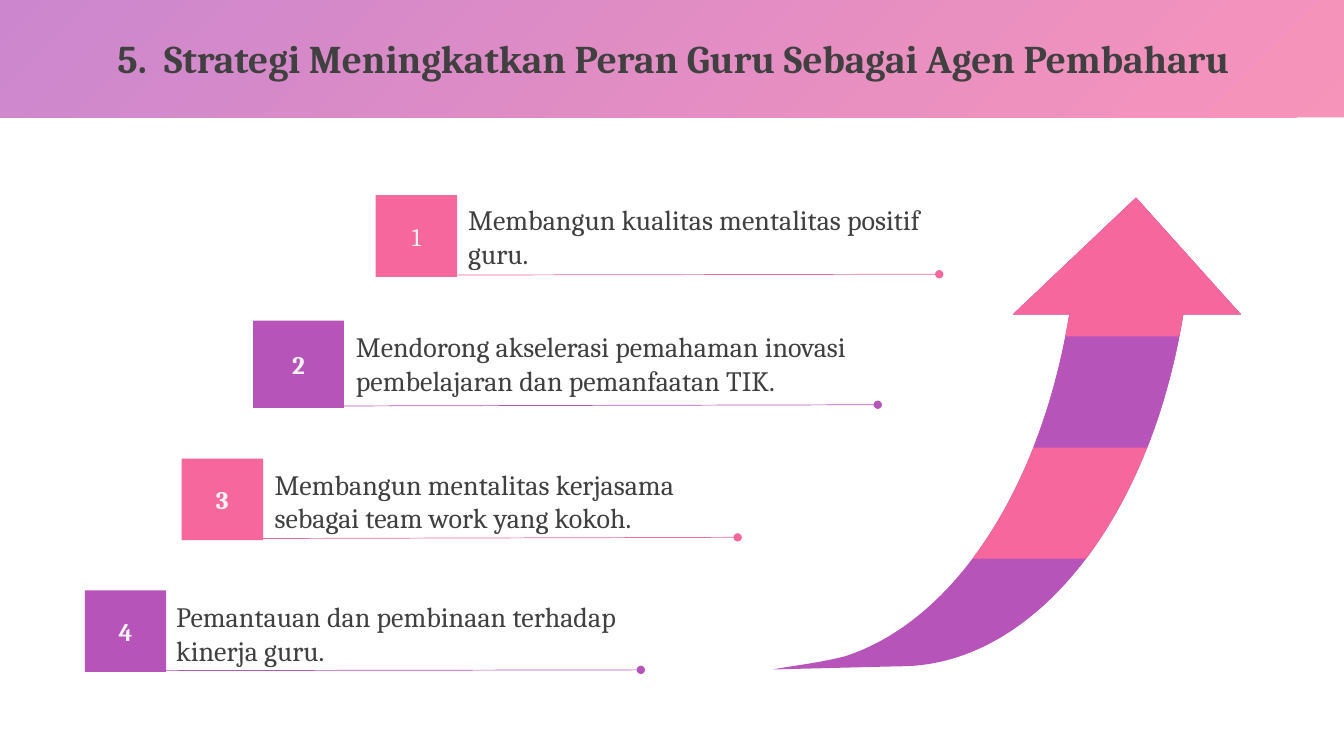
from lxml import etree
from pptx import Presentation
from pptx.dml.color import RGBColor
from pptx.enum import shapes, text
from pptx.oxml import ns
from pptx.util import Cm, Pt

PINK = RGBColor(0xF5, 0x67, 0x9D)
PURPLE = RGBColor(0xB7, 0x54, 0xBA)
DARK = RGBColor(0x40, 0x40, 0x40)
LIGHT = RGBColor(0xF2, 0xF2, 0xF2)

TITLE_FONT = {"name": "Cambria", "size": Pt(28), "bold": True}
BODY_FONT = {"name": "Cambria", "size": Pt(20)}
NUMBER_FONT = {"name": "Cambria", "size": Pt(18)}

# Number box, text box (left, top, width, height), line (x1, y1, x2, y2) in cm
STRATEGIES = [
    ((9.47, 4.92, 2.05, 2.06), (11.55, 4.99, 11.94, 1.96),
     (11.53, 6.93, 23.67, 6.91), PINK,
     "Membangun kualitas mentalitas positif guru."),
    ((6.38, 8.08, 2.29, 2.2), (8.72, 8.19, 13.44, 1.96),
     (8.48, 10.23, 22.12, 10.2), PURPLE,
     "Mendorong akselerasi pemahaman inovasi pembelajaran dan pemanfaatan TIK."),
    ((4.58, 11.56, 2.05, 2.05), (6.67, 11.65, 11.94, 1.96),
     (6.45, 13.57, 18.59, 13.54), PINK,
     "Membangun mentalitas kerjasama sebagai team work yang kokoh."),
    ((2.14, 14.88, 2.05, 2.05), (4.19, 14.98, 11.94, 1.96),
     (4.01, 16.9, 16.15, 16.88), PURPLE,
     "Pemantauan dan pembinaan terhadap kinerja guru."),
]

# Arrow curves: start, two control points, end (cm)
OUTER = [(29.82, 7.92), (28.96, 13.23), (25.96, 16.81), (22.66, 16.79)]
INNER = [(26.95, 7.92), (26.24, 12.29), (24.05, 15.65), (21.29, 16.54)]
TAIL = [(21.29, 16.54), (20.62, 16.71), (20.07, 16.76), (19.48, 16.87)]
TIP, RIGHT_BARB, LEFT_BARB = (28.63, 4.98), (31.27, 7.92), (25.53, 7.92)


def sub(parent, tag, **attrs):
    return etree.SubElement(parent, ns.qn(tag), attrs)


def write(tf, words, font, color, align=text.PP_ALIGN.LEFT):
    p = tf.paragraphs[0]
    p.alignment = align
    r = p.add_run()
    r.text = words
    for key, value in font.items():
        setattr(r.font, key, value)
    r.font.color.rgb = color
    return p


def paint(sp, color):
    sp.shadow.inherit = False
    sp.fill.solid()
    sp.fill.fore_color.rgb = color
    sp.line.fill.background()


def add_banner(s, width):
    sp = s.shapes.add_shape(shapes.MSO_SHAPE.RECTANGLE, 0, 0, width, Cm(2.96))
    sp.shadow.inherit = False
    sp.line.fill.background()
    sp.fill.gradient()
    sp.fill.gradient_angle = 135
    for stop, color in zip(sp.fill.gradient_stops, (PINK, PURPLE)):
        stop.color.rgb = color
    for clr in sp._element.iter(ns.qn("a:srgbClr")):
        sub(clr, "a:alpha", val="70000")
    s.shapes._spTree.insert(2, sp._element)  # behind the title


def set_title(s, words):
    sp = s.shapes.title
    sp.left, sp.top, sp.width, sp.height = Cm(0.89), Cm(0.53), Cm(32.16), Cm(2.01)
    tf = sp.text_frame
    tf.auto_size = text.MSO_AUTO_SIZE.NONE
    tf.vertical_anchor = text.MSO_ANCHOR.MIDDLE
    p = write(tf, words, TITLE_FONT, DARK, text.PP_ALIGN.CENTER)
    p.line_spacing, p.space_before = 0.9, Pt(10)


def add_dot_line(s, ends, color):
    line = s.shapes.add_connector(shapes.MSO_CONNECTOR.STRAIGHT, *map(Cm, ends))
    line.line.color.rgb = color
    line.line.width = Pt(0.5)
    sub(line.line._get_or_add_ln(), "a:tailEnd", type="oval")
    sub(line._element.spPr, "a:effectLst")


def add_number_box(s, place, number, color):
    sp = s.shapes.add_shape(shapes.MSO_SHAPE.RECTANGLE, *map(Cm, place))
    paint(sp, color)
    sp.text_frame.vertical_anchor = text.MSO_ANCHOR.MIDDLE
    font = {**NUMBER_FONT, "bold": number > 1}
    write(sp.text_frame, str(number), font, LIGHT, text.PP_ALIGN.CENTER)


def add_wording(s, place, words):
    tf = s.shapes.add_textbox(*map(Cm, place)).text_frame
    tf.word_wrap = True
    write(tf, words, BODY_FONT, DARK)


def between(a, b, t):
    return tuple(i + (j - i) * t for i, j in zip(a, b))


def cut_curve(curve, depth):
    """Return the upper part of a curve, down to the given depth."""
    low, high = 0, 1
    for _ in range(30):
        t = (low + high) / 2
        points, upper = curve, [curve[0]]
        while len(points) > 1:
            points = [between(a, b, t) for a, b in zip(points, points[1:])]
            upper.append(points[0])
        low, high = (t, high) if upper[-1][1] < depth else (low, t)
    return upper


def add_outline(s, start, segments, color):
    """Draw segments of one point (a line) or three points (a curve)."""
    points = [(Cm(x), Cm(y)) for segment in segments for x, y in segment]
    builder = s.shapes.build_freeform(Cm(start[0]), Cm(start[1]))
    builder.add_line_segments(points, close=True)
    sp = builder.convert_to_shape()
    lines = sp._element.findall(".//" + ns.qn("a:lnTo"))
    for segment in segments:
        parts, lines = lines[:len(segment)], lines[len(segment):]
        if len(parts) == 3:
            curve = etree.Element(ns.qn("a:cubicBezTo"))
            parts[0].addprevious(curve)
            for part in parts:
                curve.append(part[0])
                part.getparent().remove(part)
    paint(sp, color)


def add_arrow(s):
    # Whole arrow first, then each shorter band laid over it
    down = [[RIGHT_BARB], [OUTER[0]]]
    add_outline(s, TIP, [*down, OUTER[1:], [TAIL[3]], TAIL[2::-1],
                         INNER[2::-1], [LEFT_BARB]], PURPLE)
    for band, color in zip((2, 1, 0), (PINK, PURPLE, PINK)):
        depth = 8.48 + 2.8 * band
        outer, inner = cut_curve(OUTER, depth), cut_curve(INNER, depth)
        add_outline(s, TIP, [*down, outer[1:], [inner[3]], inner[2::-1],
                             [LEFT_BARB]], color)


def main():
    prs = Presentation()
    prs.slide_width, prs.slide_height = Cm(33.87), Cm(19.05)
    s = prs.slides.add_slide(prs.slide_layouts[5])

    # Heading
    add_banner(s, prs.slide_width)
    set_title(s, "5.  Strategi Meningkatkan Peran Guru Sebagai Agen Pembaharu")

    # Numbered strategies
    for number, (box, place, ends, color, words) in enumerate(STRATEGIES, 1):
        add_dot_line(s, ends, color)
        add_number_box(s, box, number, color)
        add_wording(s, place, words)

    # Rising arrow
    add_arrow(s)
    prs.save("out.pptx")


if __name__ == "__main__":
    main()
